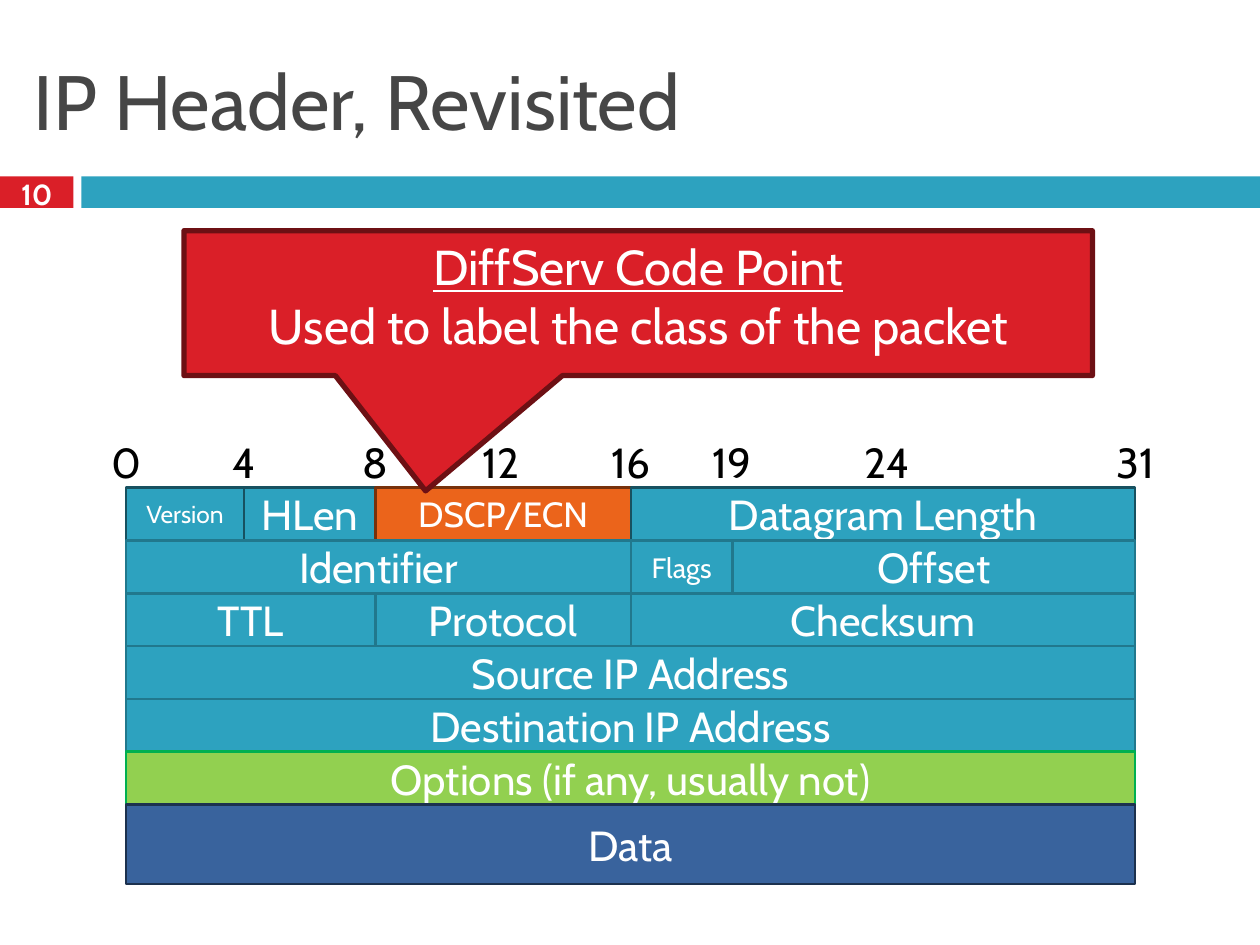
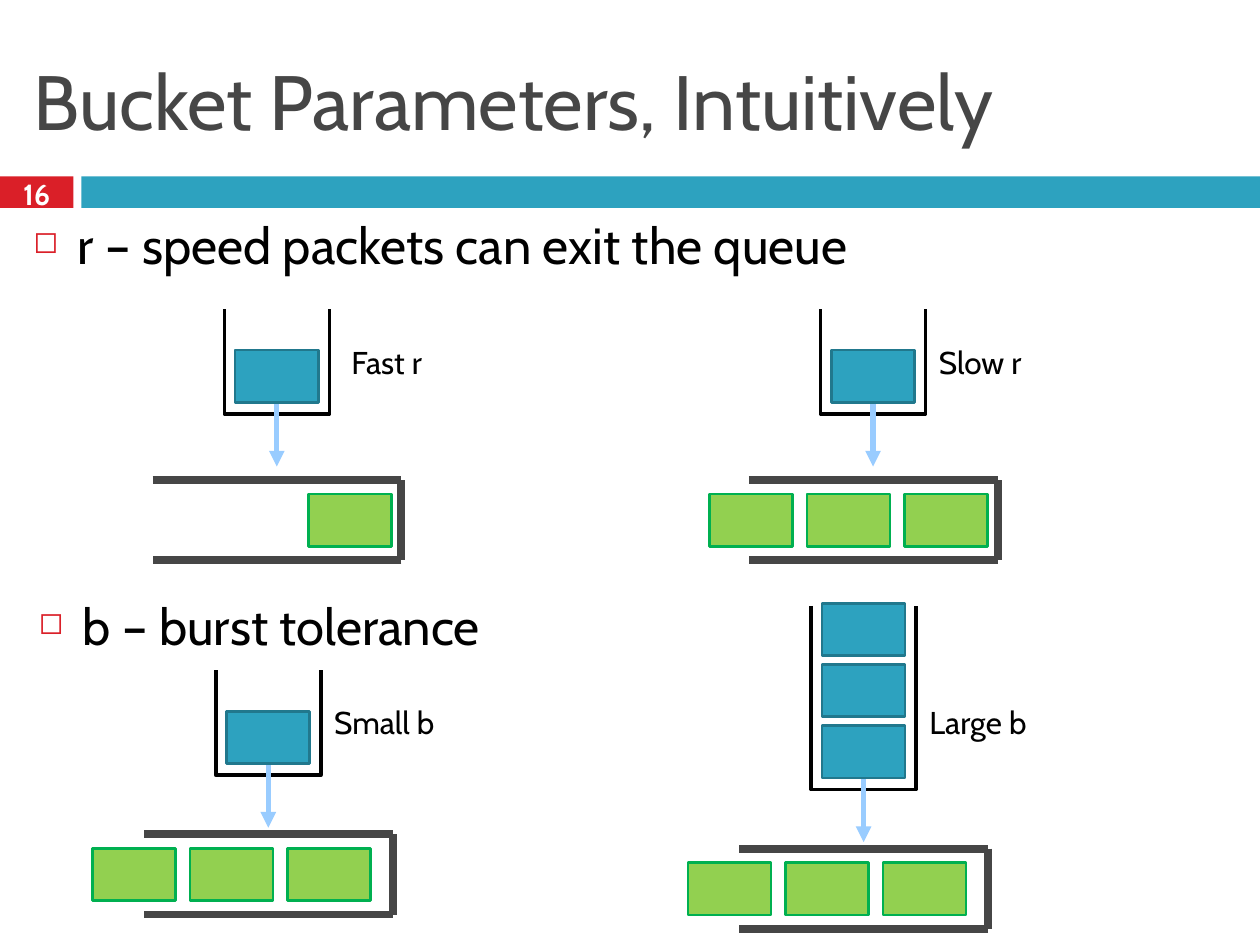
"""Builds two slides on IP header fields and token bucket parameters."""
from dataclasses import dataclass

from lxml.etree import SubElement
from pptx import Presentation
from pptx.dml.color import RGBColor
from pptx.enum.shapes import MSO_CONNECTOR, MSO_SHAPE
from pptx.enum.text import MSO_ANCHOR, MSO_AUTO_SIZE, PP_ALIGN
from pptx.oxml.ns import qn
from pptx.util import Pt


@dataclass(frozen=True)
class Theme:
    font: str = "Cabin"
    white: str = "FFFFFF"
    black: str = "000000"
    gray: str = "464646"
    red: str = "DA1F28"
    red_edge: str = "6D1014"
    teal: str = "2DA2BF"
    teal_edge: str = "21788D"
    teal_dark_edge: str = "175160"
    orange: str = "EB641B"
    orange_edge: str = "78310B"
    green: str = "92D050"
    green_edge: str = "00B050"
    navy: str = "39639D"
    navy_edge: str = "1C314E"
    flow: str = "99CCFF"
    title: float = 44
    bullet: float = 29
    callout: float = 28
    field: float = 24
    code_point: float = 20
    label: float = 18
    number: float = 16.6
    flags: float = 16
    version: float = 14
    edge: float = 1.5


@dataclass(frozen=True)
class Scene:
    label: str
    label_gap: float
    label_top: float
    left: float
    bottom: float
    height: float
    tokens: int
    queue_gap: float
    packets: int
    last_packet: float


class Deck:
    def __init__(self, theme):
        self.theme = theme
        self.presentation = Presentation()
        self.presentation.slide_width = Pt(720)
        self.presentation.slide_height = Pt(540)
        self.slide = None

    def start(self, title, number):
        theme = self.theme
        layout = self.presentation.slide_layouts[5]
        self.slide = self.presentation.slides.add_slide(layout)
        self.box((0, 100.8, 42, 18), theme.red)
        self.box((46.5, 100.8, 673.5, 18), theme.teal)
        heading = self.slide.shapes.title
        heading.left, heading.top, heading.width, heading.height = map(Pt, (12, 18, 696, 78))
        self.style_text(heading, title, theme.title, theme.gray, PP_ALIGN.LEFT)
        self.text((0, 98.9, 42, 24), number, theme.number, theme.white, bold=True)

    def style_text(self, holder, words, size, color, align=PP_ALIGN.CENTER,
                   anchor=MSO_ANCHOR.MIDDLE, bold=False, wrap=True):
        frame = holder.text_frame
        frame.text = words
        frame.word_wrap = wrap
        frame.auto_size = MSO_AUTO_SIZE.NONE
        frame.vertical_anchor = anchor
        for paragraph in frame.paragraphs:
            paragraph.alignment = align
            for run in paragraph.runs:
                run.font.name = self.theme.font
                run.font.size = Pt(size)
                run.font.bold = bold
                run.font.color.rgb = RGBColor.from_string(color)
        return frame

    def text(self, place, words, size, color, **style):
        holder = self.slide.shapes.add_textbox(*map(Pt, place))
        return self.style_text(holder, words, size, color, **style)

    def paint_line(self, line, color, width):
        line.color.rgb = RGBColor.from_string(color)
        line.width = Pt(width)

    def box(self, place, fill, edge=None, width=None, kind=MSO_SHAPE.RECTANGLE):
        shape = self.slide.shapes.add_shape(kind, *map(Pt, place))
        shape.shadow.inherit = False
        shape.fill.solid()
        shape.fill.fore_color.rgb = RGBColor.from_string(fill)
        if edge:
            self.paint_line(shape.line, edge, width or self.theme.edge)
        else:
            shape.line.fill.background()
        return shape

    def field(self, place, words, fill, edge, size):
        self.style_text(self.box(place, fill, edge), words, size, self.theme.white)

    def callout(self, place, tip, words):
        theme = self.theme
        shape = self.box(place, theme.red, theme.red_edge, 3, MSO_SHAPE.RECTANGULAR_CALLOUT)
        shape.adjustments[0], shape.adjustments[1] = tip
        frame = self.style_text(shape, words, theme.callout, theme.white, anchor=MSO_ANCHOR.TOP)
        frame.paragraphs[0].runs[0].font.underline = True

    def line(self, start, end, color, width, arrow=False):
        connector = self.slide.shapes.add_connector(
            MSO_CONNECTOR.STRAIGHT, *map(Pt, (*start, *end)))
        self.paint_line(connector.line, color, width)
        properties = connector.element.spPr
        if arrow:
            SubElement(properties.find(qn("a:ln")), qn("a:tailEnd"), type="triangle")
        SubElement(properties, qn("a:effectLst"))

    def outline(self, points, color, width):
        first, *others = [(Pt(x), Pt(y)) for x, y in points]
        builder = self.slide.shapes.build_freeform(*first, scale=1.0)
        builder.add_line_segments(others, close=False)
        shape = builder.convert_to_shape()
        shape.shadow.inherit = False
        shape.fill.background()
        self.paint_line(shape.line, color, width)

    def bullet(self, place, words):
        theme = self.theme
        frame = self.text(place, words, theme.bullet, theme.black,
                          align=PP_ALIGN.LEFT, anchor=MSO_ANCHOR.TOP)
        paragraph = frame.paragraphs[0]
        paragraph.space_before = Pt(7)
        properties = paragraph._p.get_or_add_pPr()
        properties.set("marL", str(Pt(25.2)))
        properties.set("indent", str(Pt(-25.2)))
        SubElement(SubElement(properties, qn("a:buClr")), qn("a:srgbClr"), val=theme.red)
        SubElement(properties, qn("a:buSzPct"), val="60000")
        SubElement(properties, qn("a:buChar"), char="◻")

    def scene(self, scene):
        theme = self.theme
        left, bottom = scene.left, scene.bottom
        right, top = left + 60, bottom - scene.height
        self.outline([(left, top), (left, bottom), (right, bottom), (right, top)],
                     theme.black, 2)
        middle = left + 30
        self.line((middle, bottom - 6), (middle, bottom + 30), theme.flow, 3, arrow=True)
        for token in range(scene.tokens):
            self.box((left + 6.2, bottom - 36.5 - 35 * token, 47.5, 29.8),
                     theme.teal, theme.teal_edge)

        queue_left, queue_top = left - 41, bottom + scene.queue_gap
        queue_right, queue_bottom = queue_left + 142.2, queue_top + 45.8
        corners = [(queue_left, queue_top), (queue_right, queue_top),
                   (queue_right, queue_bottom), (queue_left, queue_bottom)]
        for start, end in zip(corners, corners[1:]):
            self.line(start, end, theme.gray, 4.5)
        for packet in range(scene.packets):
            self.box((queue_left + scene.last_packet - 55.7 * packet, queue_top + 8, 47.5, 29.8),
                     theme.green, theme.green_edge)
        self.text((right + scene.label_gap, scene.label_top, 76, 29), scene.label,
                  theme.label, theme.black, align=PP_ALIGN.LEFT,
                  anchor=MSO_ANCHOR.TOP, wrap=False)


def build_header(deck):
    theme = deck.theme
    deck.start("IP Header, Revisited", "10")
    bit_edges = {0: 72, 4: 139.5, 8: 214.5, 12: 286.2, 16: 360.6,
                 19: 418.4, 24: 507.2, 31: 648.6}
    teal = (theme.teal, theme.teal_edge)
    teal_dark = (theme.teal, theme.teal_dark_edge)
    orange = (theme.orange, theme.orange_edge)
    green = (theme.green, theme.green_edge)
    navy = (theme.navy, theme.navy_edge)
    header_rows = [
        [("Version", 0, 4, teal_dark, theme.version), ("HLen", 4, 8, teal_dark, theme.field),
         ("DSCP/ECN", 8, 16, orange, theme.code_point),
         ("Datagram Length", 16, 31, teal_dark, theme.field)],
        [("Identifier", 0, 16, teal, theme.field), ("Flags", 16, 19, teal, theme.flags),
         ("Offset", 19, 31, teal, theme.field)],
        [("TTL", 0, 8, teal, theme.field), ("Protocol", 8, 16, teal, theme.field),
         ("Checksum", 16, 31, teal, theme.field)],
        [("Source IP Address", 0, 31, teal, theme.field)],
        [("Destination IP Address", 0, 31, teal, theme.field)],
        [("Options (if any, usually not)", 0, 31, green, theme.field)],
        [("Data", 0, 31, navy, theme.field)],
    ]
    row_height = 30.2
    for row, fields in enumerate(header_rows):
        height = 45.4 if row == len(header_rows) - 1 else row_height
        for words, first, last, colors, size in fields:
            left = bit_edges[first]
            place = (left, 278.6 + row * row_height, bit_edges[last] - left, height)
            deck.field(place, words, *colors, size)
    for bit, center in bit_edges.items():
        deck.text((center - 23.4, 239.8, 46.8, 47.5), str(bit), theme.field, theme.black)
    deck.callout((105.1, 131.8, 519.1, 82.8), (-0.234, 1.296),
                 "DiffServ Code Point\nUsed to label the class of the packet")


def build_buckets(deck):
    deck.start("Bucket Parameters, Intuitively", "16")
    deck.bullet((12, 118.8, 696, 46.8), "r – speed packets can exit the queue")
    deck.bullet((15, 336.2, 696, 46.8), "b – burst tolerance")
    for scene in (
        Scene("Fast r", 5.5, 192.2, 128.2, 236.6, 60, 1, 37.8, 1, 89),
        Scene("Slow r", 0.5, 192.2, 468.9, 236.6, 60, 1, 37.8, 3, 89),
        Scene("Small b", 0.5, 398.2, 123.3, 443, 60, 1, 33.8, 3, 82),
        Scene("Large b", 0.5, 398.2, 463.5, 451.2, 105, 3, 33.8, 3, 82),
    ):
        deck.scene(scene)


def main():
    deck = Deck(Theme())
    build_header(deck)
    build_buckets(deck)
    deck.presentation.save("out.pptx")


if __name__ == "__main__":
    main()
